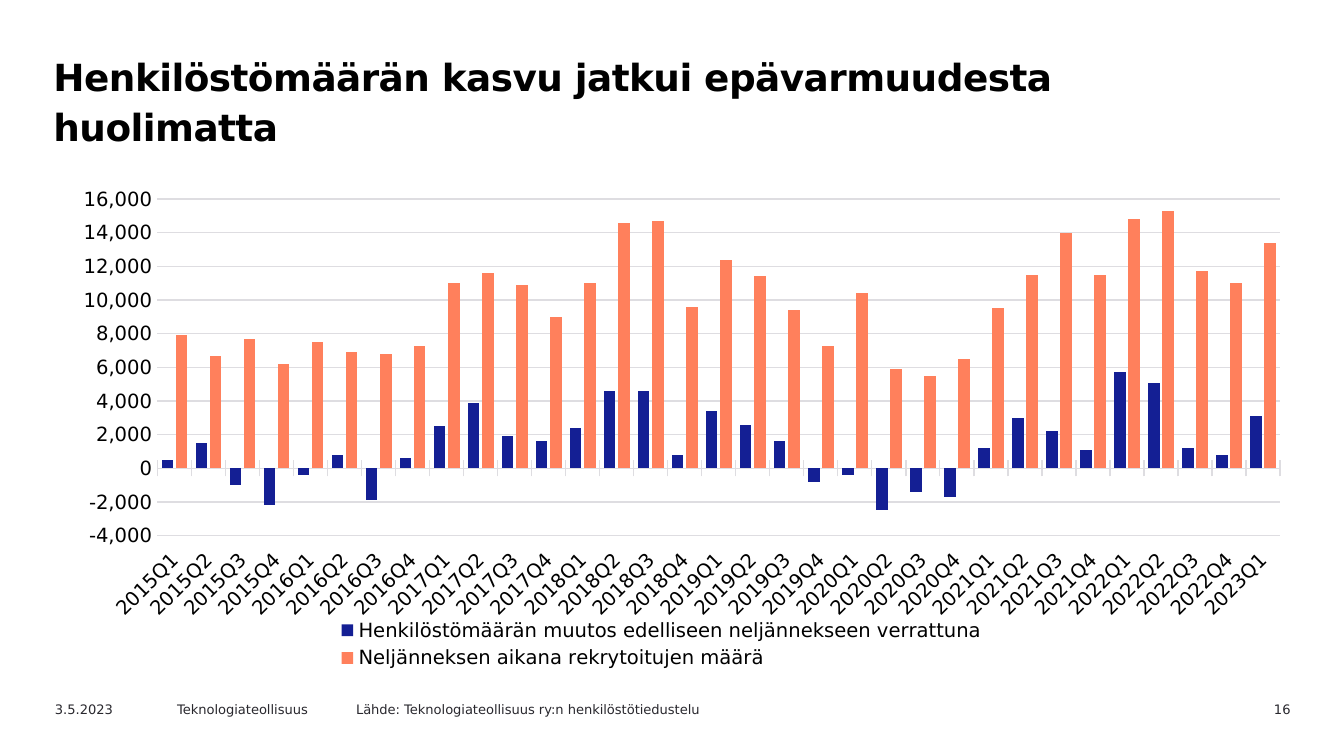
from lxml import etree
from pptx import Presentation
from pptx.chart.data import CategoryChartData
from pptx.dml.color import RGBColor
from pptx.enum.chart import XL_CHART_TYPE, XL_LEGEND_POSITION, XL_TICK_LABEL_POSITION, XL_TICK_MARK
from pptx.enum.text import MSO_ANCHOR, MSO_AUTO_SIZE, PP_ALIGN
from pptx.oxml.ns import qn
from pptx.util import Cm, Pt

FONT = "DejaVu Sans"
BLACK = RGBColor(0x00, 0x00, 0x00)
DARK_GREY = RGBColor(0x29, 0x28, 0x2E)
GRID_GREY = RGBColor(0xDE, 0xDD, 0xE1)
NAVY = RGBColor(0x14, 0x1F, 0x94)
CORAL = RGBColor(0xFF, 0x80, 0x5C)
COLUMNS = XL_CHART_TYPE.COLUMN_CLUSTERED
BOTTOM = XL_LEGEND_POSITION.BOTTOM
LOW = XL_TICK_LABEL_POSITION.LOW
CROSS, NO_TICK = XL_TICK_MARK.CROSS, XL_TICK_MARK.NONE
TOP = MSO_ANCHOR.TOP
NO_FIT = MSO_AUTO_SIZE.NONE
LEFT, RIGHT = PP_ALIGN.LEFT, PP_ALIGN.RIGHT


def write(frame, text, size=7, color=DARK_GREY, bold=False, align=LEFT,
          line_spacing=None, tracking=None):
    frame.word_wrap = True
    frame.auto_size = NO_FIT
    frame.vertical_anchor = TOP
    paragraph = frame.paragraphs[0]
    paragraph.alignment = align
    paragraph.line_spacing = line_spacing
    run = paragraph.add_run()
    run.text = text
    style_font(run.font, size, color)
    run.font.bold = bold
    if tracking is not None:
        run.font._element.set("spc", str(tracking))


def style_font(font, size, color):
    font.name = FONT
    font.size = Pt(size)
    font.color.rgb = color


prs = Presentation()
prs.slide_width, prs.slide_height = Cm(25.4), Cm(14.29)
slide = prs.slides.add_slide(prs.slide_layouts[5])

# Heading
heading = slide.shapes.title
heading.left, heading.top = Cm(0.71), Cm(0.79)
heading.width, heading.height = Cm(22.2), Cm(1.8)
heading.text_frame.margin_left = Cm(0.3)
write(heading.text_frame, "Henkilöstömäärän kasvu jatkui epävarmuudesta huolimatta",
      size=20, color=BLACK, bold=True, line_spacing=Pt(27), tracking=-30)

# Footer
for left, width, text, align in (
    (0.79, 2.54, "3.5.2023", LEFT),
    (3.1, 3.61, "Teknologiateollisuus", LEFT),
    (6.48, 8.26, "Lähde: Teknologiateollisuus ry:n henkilöstötiedustelu", LEFT),
    (22.25, 2.39, "16", RIGHT),
):
    footer = slide.shapes.add_textbox(Cm(left), Cm(13.13), Cm(width), Cm(0.46))
    write(footer.text_frame, text, align=align)

# Quarterly data, 2015Q1 to 2023Q1
staff_change = (
    500, 1500, -1000, -2200, -400, 800, -1900, 600, 2500, 3900, 1900, 1600,
    2400, 4600, 4600, 800, 3400, 2600, 1600, -800, -400, -2500, -1400, -1700,
    1200, 3000, 2200, 1100, 5700, 5100, 1200, 800, 3100)
recruited = (
    7900, 6700, 7700, 6200, 7500, 6900, 6800, 7300, 11000, 11600, 10900, 9000,
    11000, 14600, 14700, 9600, 12400, 11400, 9400, 7300, 10400, 5900, 5500, 6500,
    9500, 11500, 14000, 11500, 14800, 15300, 11700, 11000, 13400)
data = CategoryChartData(number_format="#,##0")
data.categories = [f"{2015 + i // 4}Q{i % 4 + 1}" for i in range(len(recruited))]
data.add_series("Henkilöstömäärän muutos edelliseen neljännekseen verrattuna", staff_change)
data.add_series("Neljänneksen aikana rekrytoitujen määrä", recruited)

chart = slide.shapes.add_chart(
    COLUMNS, Cm(0.71), Cm(3.15), Cm(23.6), Cm(9.6), data).chart
chart.has_title = False
style_font(chart.font, 10, DARK_GREY)
chart.has_legend = True
chart.legend.position = BOTTOM
chart.legend.include_in_layout = False
style_font(chart.legend.font, 10.5, BLACK)

columns = chart.plots[0]
columns.gap_width = 70
columns.overlap = -21
columns.vary_by_categories = False
for series, color in zip(columns.series, (NAVY, CORAL)):
    series.invert_if_negative = False
    series.format.fill.solid()
    series.format.fill.fore_color.rgb = color

quarters = chart.category_axis
quarters.tick_label_position = LOW
quarters.major_tick_mark = CROSS
quarters.minor_tick_mark = NO_TICK
quarters.has_major_gridlines = False
style_font(quarters.tick_labels.font, 10.5, BLACK)
quarters._element.txPr.bodyPr.set("rot", "-2700000")

people = chart.value_axis
people.minimum_scale, people.maximum_scale = -4000, 16000
people.major_unit = 2000
people.major_tick_mark = people.minor_tick_mark = NO_TICK
people.has_major_gridlines = True
people.tick_labels.number_format = "#,##0"
people.tick_labels.number_format_is_linked = False
style_font(people.tick_labels.font, 10.5, BLACK)
people.format.line.fill.background()

for line in (quarters.format.line, people.major_gridlines.format.line):
    line.color.rgb = GRID_GREY
    line.width = Pt(0.75)

# Fixed inner plot area, as shares of the chart's size
plot_area = chart._chartSpace.chart.plotArea
for automatic in plot_area.findall(qn("c:layout")):
    plot_area.remove(automatic)
layout = etree.Element(qn("c:layout"))
plot_area.insert(0, layout)
manual = etree.SubElement(layout, qn("c:manualLayout"))
for tag, value in (
    ("layoutTarget", "inner"), ("xMode", "edge"), ("yMode", "edge"),
    ("x", "0.096"), ("y", "0.064"), ("w", "0.899"), ("h", "0.663"),
):
    etree.SubElement(manual, qn(f"c:{tag}")).set("val", value)

prs.save("out.pptx")
